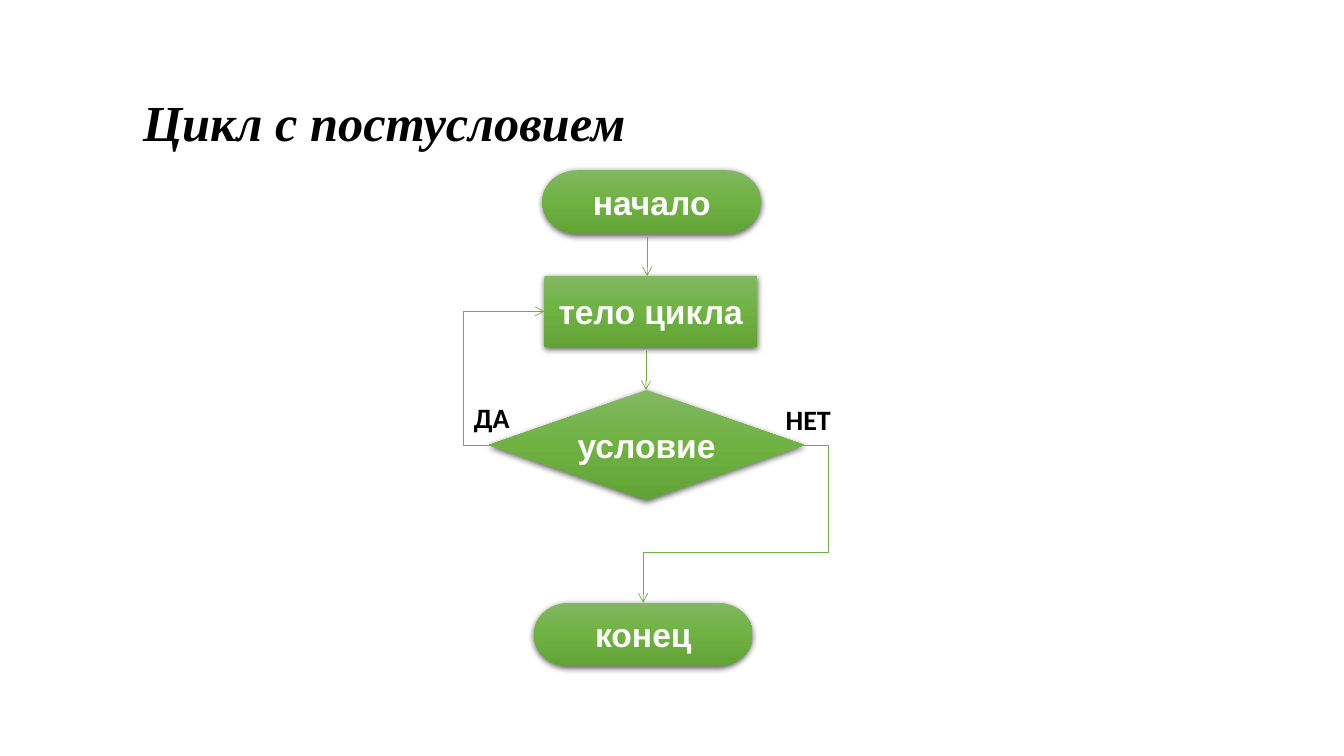
from copy import deepcopy
from lxml.etree import SubElement as Sub
from pptx import Presentation
from pptx.dml.color import RGBColor as Rgb
from pptx.enum.shapes import MSO_CONNECTOR as Link, MSO_SHAPE as Form
from pptx.enum.text import MSO_ANCHOR as Anchor, PP_ALIGN as Align
from pptx.oxml.ns import qn
from pptx.util import Cm, Pt

HUES = {"ink": "000000", "white": "FFFFFF", "line": "70AD47",
        "light": "81B861", "mid": "6FB242", "dark": "62A336"}


class Chart:
    """Flow chart style and the slide being drawn."""

    def __init__(self, slide):
        self.slide = slide
        self.items = slide.shapes

    def hue(self, name):
        return Rgb.from_string(HUES[name])

    def words(self, frame, text, size, face, hue, align=Align.CENTER):
        frame.word_wrap = True
        para = frame.paragraphs[0]
        para.alignment = align
        run = para.add_run()
        run.text = text
        font = run.font
        font.size, font.name, font.bold = Pt(size), face, True
        font.color.rgb = self.hue(hue)
        return para, font

    def title(self, text, *box):
        head = self.items.title
        head.left, head.top, head.width, head.height = map(Cm, box)
        head.text_frame.vertical_anchor = Anchor.TOP
        para, font = self.words(head.text_frame, text, 36, "Times New Roman",
                                "ink", Align.JUSTIFY)
        para.line_spacing = 1.5
        font.italic = True

    def block(self, form, text, *box):
        shape = self.items.add_shape(form, *map(Cm, box))
        shape.line.fill.background()
        # Three-stop gradient, light at the top
        fill = shape.fill
        fill.gradient()
        fill.gradient_angle = 270
        stops = shape._element.spPr.find(".//" + qn("a:gsLst"))
        stops.insert(1, deepcopy(stops[0]))
        for stop, spot, name in zip(fill.gradient_stops, (0, 0.5, 1),
                                    ("light", "mid", "dark")):
            stop.position = spot
            stop.color.rgb = self.hue(name)
        # Soft shadow below
        shape.shadow.inherit = False
        glow = Sub(shape._element.spPr.find(qn("a:effectLst")),
                   qn("a:outerShdw"), blurRad=str(Pt(4.5)),
                   dist=str(Pt(1.5)), dir="5400000", algn="ctr",
                   rotWithShape="0")
        tint = Sub(glow, qn("a:srgbClr"), val=HUES["ink"])
        Sub(tint, qn("a:alpha"), val="63000")
        frame = shape.text_frame
        frame.vertical_anchor = Anchor.MIDDLE
        frame.margin_left = frame.margin_right = Cm(0.2)
        self.words(frame, text, 24, "Arial", "white")

    def label(self, text, *box):
        area = self.items.add_textbox(*map(Cm, box))
        self.words(area.text_frame, text, 20, "Calibri", "ink")

    def arrow(self, start, end, bends=()):
        """Draw an arrow; bends are the elbow positions as shares of its box."""
        kind = Link.ELBOW if bends else Link.STRAIGHT
        line = self.items.add_connector(kind, *map(Cm, start + end))
        line.line.width = Pt(0.5)
        line.line.color.rgb = self.hue("line")
        props = line._element.spPr
        Sub(props.find(qn("a:ln")), qn("a:tailEnd"), type="arrow")
        Sub(props, qn("a:effectLst"))
        if bends:
            geom = props.find(qn("a:prstGeom"))
            geom.set("prst", f"bentConnector{len(bends) + 2}")
            guides = geom.find(qn("a:avLst"))
            for num, share in enumerate(bends, 1):
                Sub(guides, qn("a:gd"), name=f"adj{num}",
                    fmla=f"val {round(share * 100000)}")


def main():
    deck = Presentation()
    deck.slide_width, deck.slide_height = Cm(33.87), Cm(19.05)
    chart = Chart(deck.slides.add_slide(deck.slide_layouts[5]))

    chart.title("Цикл с постусловием", 3.35, 1.4, 27.48, 2.29)

    # Steps
    chart.block(Form.FLOWCHART_TERMINATOR, "начало", 13.67, 4.29, 5.51, 1.6)
    chart.block(Form.FLOWCHART_PROCESS, "тело цикла", 13.72, 6.96, 5.36, 1.78)
    chart.block(Form.FLOWCHART_TERMINATOR, "конец", 13.46, 15.19, 5.51, 1.6)
    chart.block(Form.FLOWCHART_DECISION, "условие", 12.32, 9.83, 7.95, 2.77)

    # Straight arrows down
    chart.arrow((16.31, 5.97), (16.31, 6.96))
    chart.arrow((16.28, 8.84), (16.28, 9.83))

    # Branches: back to the body, on to the end
    chart.arrow((12.32, 11.23), (13.72, 7.85), (-0.45,))
    chart.arrow((20.24, 11.23), (16.21, 15.19), (-0.16, 0.68))
    chart.label("ДА", 11.61, 9.96, 1.57, 1.12)
    chart.label("НЕТ", 19.28, 10.03, 2.18, 1.12)

    deck.save("out.pptx")


if __name__ == "__main__":
    main()
